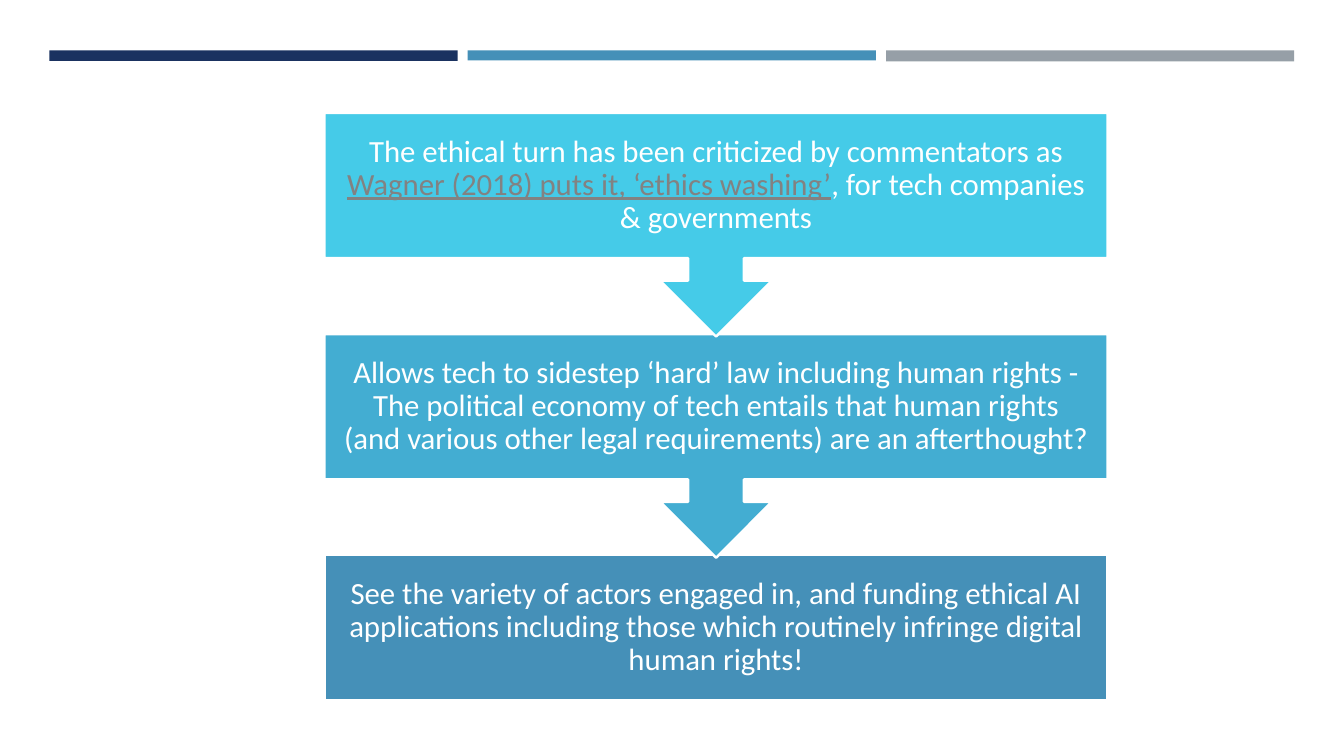
from pptx import Presentation
from pptx.dml.color import RGBColor
from pptx.enum import shapes, text
from pptx.util import Pt

WHITE = RGBColor(0xFF, 0xFF, 0xFF)
NAVY = RGBColor(0x1A, 0x32, 0x60)
BLUE = RGBColor(0x45, 0x90, 0xB8)
GREY = RGBColor(0x96, 0x9F, 0xA7)
MID_BLUE = RGBColor(0x43, 0xAD, 0xD2)
CYAN = RGBColor(0x45, 0xCB, 0xE8)
CITATION_GREY = RGBColor(0x82, 0x82, 0x82)

RECTANGLE = shapes.MSO_SHAPE.RECTANGLE
CALLOUT = shapes.MSO_SHAPE.DOWN_ARROW_CALLOUT

deck = Presentation()
deck.slide_width, deck.slide_height = Pt(960), Pt(540)
page = deck.slides.add_slide(deck.slide_layouts[6])


def add_block(kind, left, top, width, height, color):
    block = page.shapes.add_shape(kind, Pt(left), Pt(top), Pt(width), Pt(height))
    block.shadow.inherit = False
    block.fill.solid()
    block.fill.fore_color.rgb = color
    return block


for column, (color, height) in enumerate([(NAVY, 7.5), (BLUE, 7.2), (GREY, 7.9)]):
    bar = add_block(RECTANGLE, 35.3 + 298.8 * column, 36, 291.6, height, color)
    bar.line.fill.background()

steps = [
    (CALLOUT, 159.8, CYAN, [
        ("The ethical turn has been criticized by commentators as ", False),
        ("Wagner (2018) puts it, ‘ethics washing’", True),
        (", for tech companies & governments", False),
    ]),
    (CALLOUT, 159.8, MID_BLUE, [
        ("Allows tech to sidestep ‘hard’ law including human rights - "
         "The political economy of tech entails that human rights "
         "(and various other legal requirements) are an afterthought?", False),
    ]),
    (RECTANGLE, 103.7, BLUE, [
        ("See the variety of actors engaged in, and funding ethical AI "
         "applications including those which routinely infringe digital "
         "human rights!", False),
    ]),
]

for row, (kind, height, color, runs) in reversed(list(enumerate(steps))):
    box = add_block(kind, 231.8, 80.6 + 158 * row, 559.4, height, color)
    box.line.color.rgb = WHITE
    box.line.width = Pt(1.75)
    frame = box.text_frame
    frame.word_wrap = True
    frame.vertical_anchor = text.MSO_ANCHOR.MIDDLE
    frame.margin_left = frame.margin_right = Pt(12.3)
    frame.margin_top = frame.margin_bottom = Pt(12.3)
    para = frame.paragraphs[0]
    para.alignment = text.PP_ALIGN.CENTER
    para.line_spacing = 0.9
    for wording, is_citation in runs:
        span = para.add_run()
        span.text = wording
        span.font.name = "Calibri"
        span.font.size = Pt(22)
        span.font.underline = is_citation
        span.font.color.rgb = CITATION_GREY if is_citation else WHITE

deck.save("out.pptx")
